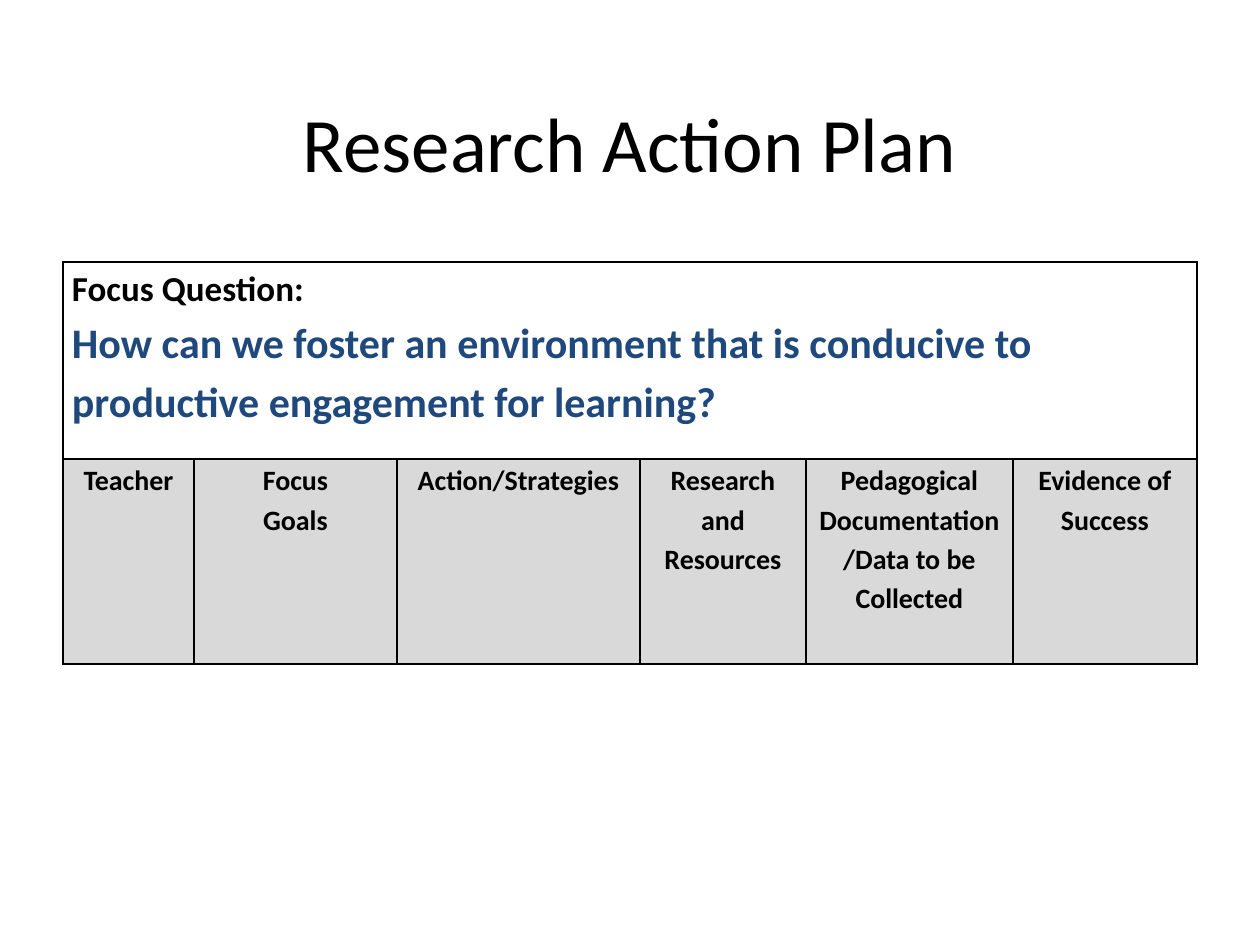
from dataclasses import dataclass

import pptx
import pptx.dml.color
import pptx.enum.text
import pptx.oxml
import pptx.oxml.ns
import pptx.util

PX = 914400 / 126
FONT = "Calibri"
COLORS = {"ink": "000000", "question": "1F497D", "header": "D9D9D9", "paper": "FFFFFF"}
ALIGN = pptx.enum.text.PP_ALIGN
ROW_HEIGHTS = (197, 205)


@dataclass
class Line:
    text: str
    size: int
    color: str = "ink"
    bold: bool = True


@dataclass
class Column:
    width: int
    lines: tuple[str, ...]


QUESTION = [
    Line("Focus Question:", 20),
    Line(
        "How can we foster an environment that is conducive to "
        "productive engagement for learning?",
        24,
        "question",
    ),
]
COLUMNS = [
    Column(131, ("Teacher",)),
    Column(203, ("Focus", "Goals")),
    Column(243, ("Action/Strategies",)),
    Column(166, ("Research and Resources",)),
    Column(207, ("Pedagogical Documentation/Data to be Collected",)),
    Column(184, ("Evidence of Success",)),
]


def px(length: int) -> pptx.util.Emu:
    return pptx.util.Emu(round(length * PX))


def rgb(name: str) -> pptx.dml.color.RGBColor:
    return pptx.dml.color.RGBColor.from_string(COLORS[name])


def format_runs(para, line: Line) -> None:
    for span in para.runs:
        span.font.name = FONT
        span.font.size = pptx.util.Pt(line.size)
        span.font.bold = line.bold
        span.font.color.rgb = rgb(line.color)


def add_borders(cell) -> None:
    properties = cell._tc.get_or_add_tcPr()
    for side in ("lnL", "lnR", "lnT", "lnB"):
        properties.append(
            pptx.oxml.parse_xml(
                f'<a:{side} {pptx.oxml.ns.nsdecls("a")} w="{pptx.util.Pt(1)}">'
                f'<a:solidFill><a:srgbClr val="{COLORS["ink"]}"/></a:solidFill>'
                f"</a:{side}>"
            )
        )


def style_cell(cell, fill: str) -> None:
    add_borders(cell)
    cell.fill.solid()
    cell.fill.fore_color.rgb = rgb(fill)
    cell.margin_left = cell.margin_right = px(9)
    cell.margin_top = cell.margin_bottom = 0


def write_cell(cell, lines: list[Line], align: ALIGN) -> None:
    cell.text_frame.text = "\n".join(line.text for line in lines)
    for para, line in zip(cell.text_frame.paragraphs, lines):
        para.alignment = align
        para.line_spacing = 1.15
        format_runs(para, line)


def add_title(page) -> None:
    title = page.shapes.title
    title.left, title.top, title.width, title.height = map(px, (63, 63, 1134, 158))
    title.text_frame.text = "Research Action Plan"
    title.text_frame.vertical_anchor = pptx.enum.text.MSO_ANCHOR.MIDDLE
    para = title.text_frame.paragraphs[0]
    para.alignment = ALIGN.CENTER
    format_runs(para, Line(para.text, 44, bold=False))


def add_plan(page) -> None:
    width = sum(column.width for column in COLUMNS)
    frame = page.shapes.add_table(
        len(ROW_HEIGHTS), len(COLUMNS), px(63), px(262), px(width), px(sum(ROW_HEIGHTS))
    )
    table = frame.table
    table.first_row = table.horz_banding = False
    for row, height in zip(table.rows, ROW_HEIGHTS):
        row.height = px(height)
    for index, column in enumerate(COLUMNS):
        table.columns[index].width = px(column.width)
        style_cell(table.cell(0, index), "paper")
        header = table.cell(1, index)
        style_cell(header, "header")
        write_cell(header, [Line(text, 16) for text in column.lines], ALIGN.CENTER)
    question = table.cell(0, 0)
    question.merge(table.cell(0, len(COLUMNS) - 1))
    write_cell(question, QUESTION, ALIGN.LEFT)


def main() -> None:
    deck = pptx.Presentation()
    deck.slide_width, deck.slide_height = px(1260), px(945)
    page = deck.slides.add_slide(deck.slide_layouts.get_by_name("Title Only"))
    add_title(page)
    add_plan(page)
    deck.save("out.pptx")


if __name__ == "__main__":
    main()
